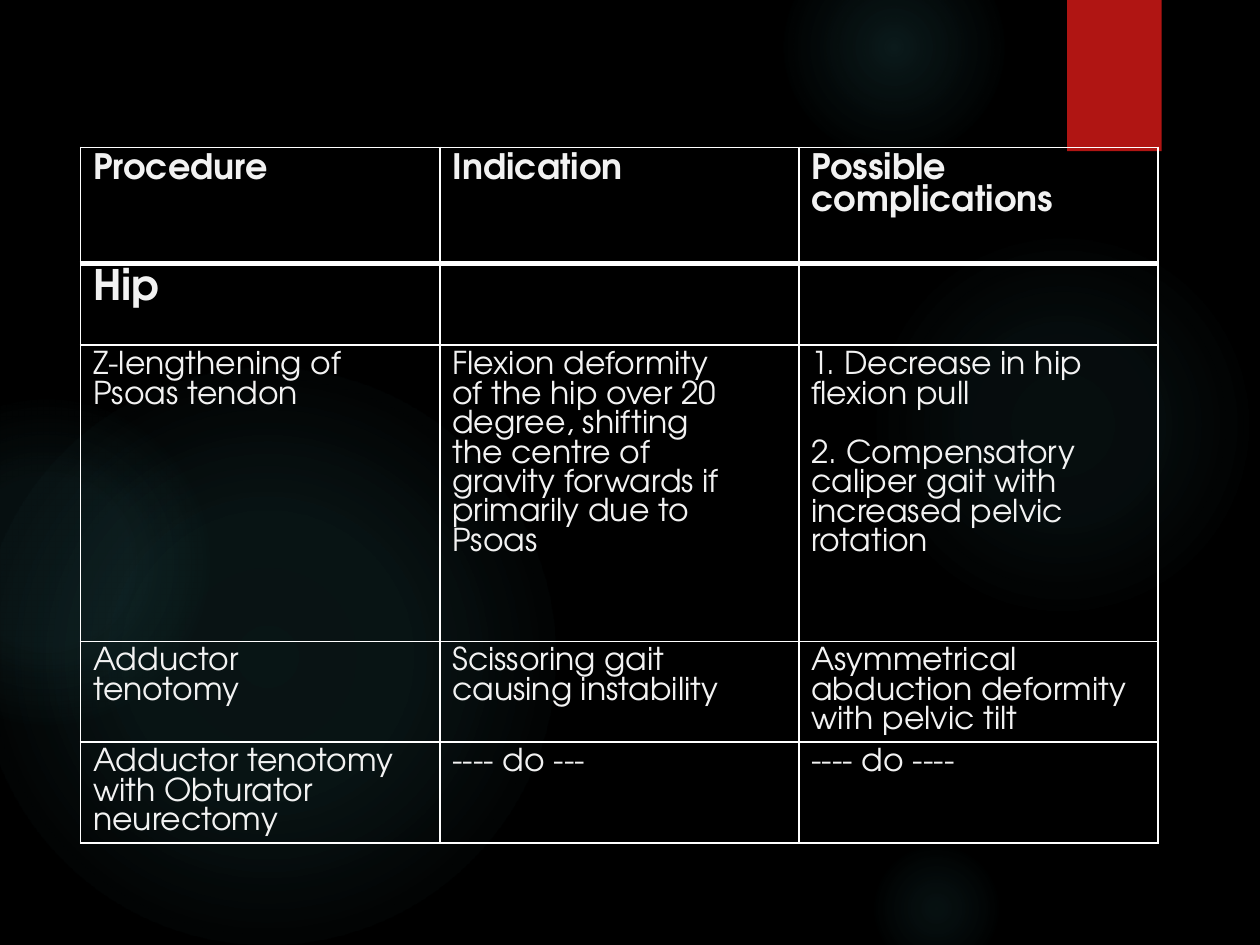
import pptx
import pptx.util
import pptx.oxml
import pptx.oxml.ns
from pptx.dml.color import RGBColor
from pptx.enum.shapes import MSO_SHAPE
from lxml import etree

BLACK = RGBColor(0, 0, 0)
WHITE = RGBColor(0xFF, 0xFF, 0xFF)
PALE = RGBColor(0xF2, 0xF2, 0xF2)
RED = RGBColor(0xB0, 0x15, 0x13)
TEAL = RGBColor(0x50, 0xB9, 0xC1)
FONT = "TeX Gyre Adventor"
WIDE, HIGH = 10, 7.5
NS = pptx.oxml.ns.nsdecls("a")

# left, top, diameter, then (stop, alpha) in percent
GLOWS = [
    (6.89, 1.83, 3.08, [(0, 7), (36, 6), (69, 0)]),
    (6.22, -0.5, 1.75, [(0, 14), (36, 7), (73, 0)]),
    (6.89, 6.67, 1.08, [(0, 9), (36, 5), (66, 0)]),
    (-0.17, 2.92, 4.58, [(0, 11), (36, 10), (75, 0)]),
    (-0.92, 3.17, 2.58, [(0, 8), (36, 8), (72, 0)]),
]
ROWS = [0.92, 0.65, 2.35, 0.65, 0.65]
SIZES = [20, 24, 18, 18, 18]
CELLS = [
    ["Procedure", "Indication", "Possible complications"],
    ["Hip", "", ""],
    ["Z-lengthening of\nPsoas tendon",
     "Flexion deformity\nof the hip over 20\ndegree, shifting\nthe centre of\n"
     "gravity forwards if primarily due to\nPsoas",
     "1. Decrease in hip\nflexion pull\n2. Compensatory caliper gait with\n"
     "increased pelvic\nrotation"],
    ["Adductor\ntenotomy", "Scissoring gait\ncausing instability",
     "Asymmetrical\nabduction deformity\nwith pelvic tilt"],
    ["Adductor tenotomy with Obturator\nneurectomy", "---- do ---", "---- do ----"],
]


def add_form(slide, kind, box):
    form = slide.shapes.add_shape(kind, *map(pptx.util.Inches, box))
    form.shadow.inherit = False
    form.line.fill.background()
    return form


def add_glow(slide, box, stops):
    """Draw a circle that fades out from its centre."""
    form = add_form(slide, MSO_SHAPE.OVAL, box)
    marks = "".join(
        f'<a:gs pos="{pos * 1000}"><a:srgbClr val="{TEAL}">'
        f'<a:alpha val="{alpha * 1000}"/></a:srgbClr></a:gs>'
        for pos, alpha in stops)
    fill = pptx.oxml.parse_xml(
        f'<a:gradFill {NS} rotWithShape="1"><a:gsLst>{marks}</a:gsLst>'
        '<a:path path="circle"><a:fillToRect l="50000" t="50000" r="50000" b="50000"/>'
        '</a:path></a:gradFill>')
    form.element.spPr.find(pptx.oxml.ns.qn("a:prstGeom")).addnext(fill)


def add_tab(slide, box):
    """Draw the red tab with its soft shadow below."""
    form = add_form(slide, MSO_SHAPE.RECTANGLE, box)
    form.fill.solid()
    form.fill.fore_color.rgb = RED
    soft = pptx.oxml.parse_xml(
        f'<a:outerShdw {NS} blurRad="{pptx.util.Pt(3)}" dist="{pptx.util.Pt(2)}" '
        f'dir="5400000" rotWithShape="0"><a:srgbClr val="{BLACK}">'
        '<a:alpha val="45000"/></a:srgbClr></a:outerShdw>')
    form.element.spPr.find(pptx.oxml.ns.qn("a:effectLst")).append(soft)


def set_edges(cell, base):
    """Rule all four sides in white; base is the width of the bottom one."""
    props = cell._tc.get_or_add_tcPr()
    for spot, (side, width) in enumerate(zip("LRTB", (1, 1, 1, base))):
        props.insert(spot, pptx.oxml.parse_xml(
            f'<a:ln{side} {NS} w="{pptx.util.Pt(width)}"><a:solidFill>'
            f'<a:srgbClr val="{WHITE}"/></a:solidFill></a:ln{side}>'))


def set_text(cell, text, size, bold):
    cell.text_frame.text = text
    for para in cell.text_frame.paragraphs:
        para.font.size = pptx.util.Pt(size)
        if para.text.startswith("2."):
            para.space_before = pptx.util.Pt(17)
        for run in para.runs:
            run.font.name = FONT
            run.font.size = pptx.util.Pt(size)
            run.font.bold = bold
            run.font.color.rgb = PALE


def add_grid(slide, box):
    """Fill the box's width with equal columns of procedures."""
    grid = slide.shapes.add_table(
        len(ROWS), len(CELLS[0]), *map(pptx.util.Inches, box)).table
    grid.first_row = grid.horz_banding = False
    for col in grid.columns:
        col.width = pptx.util.Inches(box[2] / len(CELLS[0]))
    for i, texts in enumerate(CELLS):
        grid.rows[i].height = pptx.util.Inches(ROWS[i])
        for j, text in enumerate(texts):
            cell = grid.cell(i, j)
            cell.fill.background()
            set_edges(cell, 3 if i == 0 else 1)
            set_text(cell, text, SIZES[i], i < 2)
    # The second row meets the heavy rule below the heads.
    for cell in grid.rows[1].cells:
        top = cell._tc.tcPr.find(pptx.oxml.ns.qn("a:lnT"))
        top.set("w", str(pptx.util.Pt(3)))


def main():
    deck = pptx.Presentation()
    deck.slide_width = pptx.util.Inches(WIDE)
    deck.slide_height = pptx.util.Inches(HIGH)
    slide = deck.slides.add_slide(deck.slide_layouts[6])
    slide.background.fill.solid()
    slide.background.fill.fore_color.rgb = BLACK
    for left, top, size, stops in GLOWS:
        add_glow(slide, (left, top, size, size), stops)
    add_tab(slide, (8.47, 0, 0.075 * WIDE, 0.16 * HIGH))
    add_grid(slide, (0.64, 1.17, 8.55, sum(ROWS)))
    deck.save("out.pptx")


if __name__ == "__main__":
    main()
